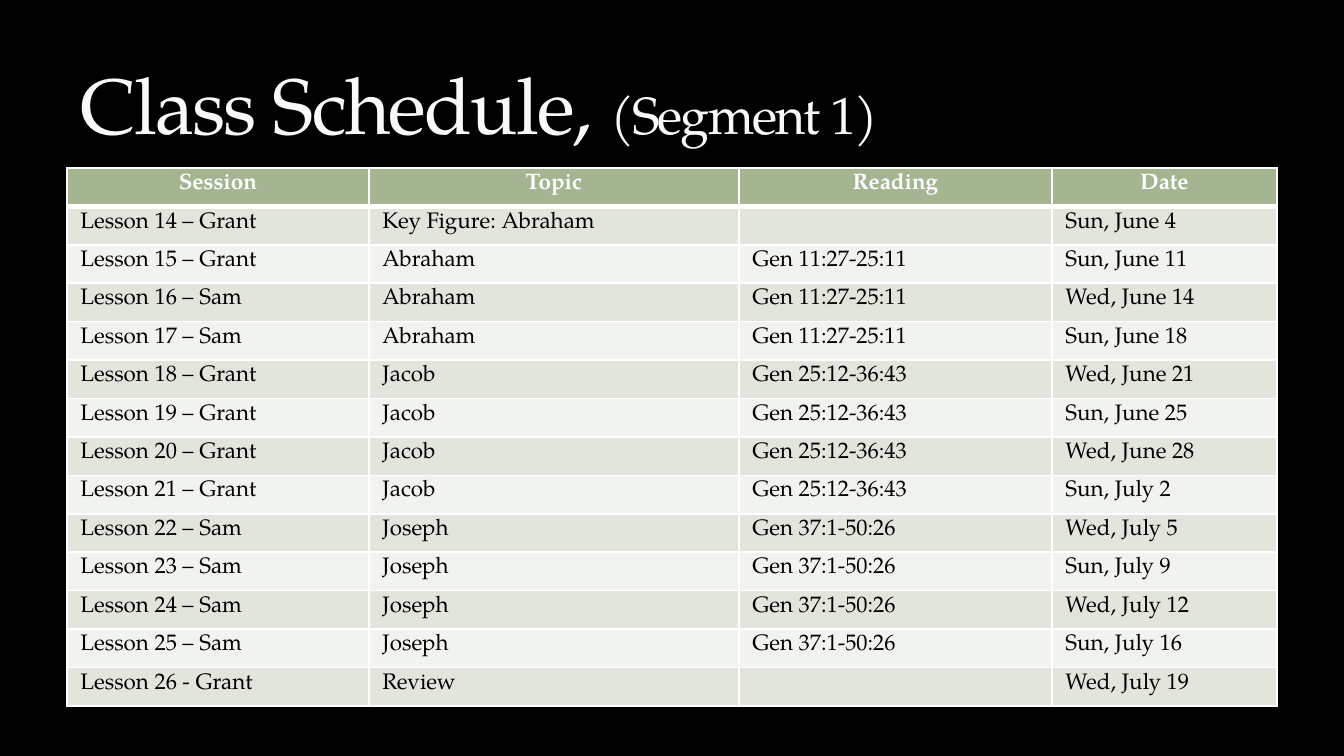
from dataclasses import dataclass

from lxml.etree import SubElement
from pptx import Presentation
from pptx.dml.color import RGBColor
from pptx.enum.text import MSO_ANCHOR, MSO_AUTO_SIZE, PP_ALIGN
from pptx.oxml.ns import qn
from pptx.util import Inches, Pt

HEADINGS = ("Session", "Topic", "Reading", "Date")
LESSONS = [
    ("Lesson 14 – Grant", "Key Figure: Abraham", "", "Sun, June 4"),
    ("Lesson 15 – Grant", "Abraham", "Gen 11:27-25:11", "Sun, June 11"),
    ("Lesson 16 – Sam", "Abraham", "Gen 11:27-25:11", "Wed, June 14"),
    ("Lesson 17 – Sam", "Abraham", "Gen 11:27-25:11", "Sun, June 18"),
    ("Lesson 18 – Grant", "Jacob", "Gen 25:12-36:43", "Wed, June 21"),
    ("Lesson 19 – Grant", "Jacob", "Gen 25:12-36:43", "Sun, June 25"),
    ("Lesson 20 – Grant", "Jacob", "Gen 25:12-36:43", "Wed, June 28"),
    ("Lesson 21 – Grant", "Jacob", "Gen 25:12-36:43", "Sun, July 2"),
    ("Lesson 22 – Sam", "Joseph", "Gen 37:1-50:26", "Wed, July 5"),
    ("Lesson 23 – Sam", "Joseph", "Gen 37:1-50:26", "Sun, July 9"),
    ("Lesson 24 – Sam", "Joseph", "Gen 37:1-50:26", "Wed, July 12"),
    ("Lesson 25 – Sam", "Joseph", "Gen 37:1-50:26", "Sun, July 16"),
    ("Lesson 26 - Grant", "Review", "", "Wed, July 19"),
]
COLUMN_WIDTHS = (302, 370, 313, 225)
TABLE_LEFT, TABLE_TOP, TABLE_HEIGHT = 67, 168, 538
TITLE_BOX = (67, 16, 1210, 134)
SLIDE_SIZE = (1344, 756)
EMU_PER_PX = Inches(10) / SLIDE_SIZE[0]


@dataclass(frozen=True)
class Theme:
    font: str = "TeX Gyre Pagella"
    background: str = "000000"
    title: str = "F9F9F9"
    title_outline: str = "3C4422"
    header_fill: str = "A5B592"
    header_text: str = "FFFFFF"
    bands: tuple = ("E1E5DC", "F0F3EE")
    body_text: str = "000000"
    border: str = "FFFFFF"
    title_size: int = 42
    segment_size: int = 28
    cell_size: int = 12


THEME = Theme()
TITLE_RUNS = [
    ("Class Schedule, ", THEME.title_size),
    ("(Segment 1)", THEME.segment_size),
]


def px(length):
    return round(length * EMU_PER_PX)


def add_run(paragraph, text, size, color, bold=False):
    run = paragraph.add_run()
    run.text = text
    run.font.name = THEME.font
    run.font.size = Pt(size)
    run.font.bold = bold
    run.font.color.rgb = RGBColor.from_string(color)
    return run


def add_line(parent, tag, width, color):
    line = SubElement(parent, qn(tag), w=str(Pt(width)))
    fill = SubElement(line, qn("a:solidFill"))
    return line, SubElement(fill, qn("a:srgbClr"), val=color)


def fill_title(title):
    title.left, title.top, title.width, title.height = map(px, TITLE_BOX)
    frame = title.text_frame
    frame.word_wrap = True
    frame.auto_size = MSO_AUTO_SIZE.NONE
    frame.vertical_anchor = MSO_ANCHOR.BOTTOM
    frame.margin_bottom = 0
    paragraph = frame.paragraphs[0]
    paragraph.alignment = PP_ALIGN.LEFT
    for text, size in TITLE_RUNS:
        properties = add_run(paragraph, text, size, THEME.title).font._element
        properties.set("spc", "-100")
        outline, outline_color = add_line(properties, "a:ln", 0.25, THEME.title_outline)
        SubElement(outline_color, qn("a:alpha"), val="25000")
        properties.insert(0, outline)


def fill_cell(cell, text, row):
    is_header = row == 0
    cell.margin_left = cell.margin_right = Inches(0.1)
    cell.margin_top = cell.margin_bottom = Inches(0.04)
    properties = cell._tc.get_or_add_tcPr()
    widths = {"L": 1, "R": 1, "T": 3 if row == 1 else 1, "B": 3 if is_header else 1}
    for side, width in widths.items():
        add_line(properties, f"a:ln{side}", width, THEME.border)
    cell.fill.solid()
    background = THEME.header_fill if is_header else THEME.bands[(row - 1) % 2]
    cell.fill.fore_color.rgb = RGBColor.from_string(background)
    paragraph = cell.text_frame.paragraphs[0]
    paragraph.alignment = PP_ALIGN.CENTER if is_header else PP_ALIGN.LEFT
    if text:
        color = THEME.header_text if is_header else THEME.body_text
        add_run(paragraph, text, THEME.cell_size, color, is_header)
    else:
        SubElement(paragraph._p, qn("a:endParaRPr"), sz=str(THEME.cell_size * 100))


def add_schedule(slide):
    rows = [HEADINGS, *LESSONS]
    frame = slide.shapes.add_table(
        len(rows), len(HEADINGS), px(TABLE_LEFT), px(TABLE_TOP),
        px(sum(COLUMN_WIDTHS)), px(TABLE_HEIGHT),
    )
    schedule = frame.table
    for column, width in zip(schedule.columns, COLUMN_WIDTHS):
        column.width = px(width)
    for row, texts in enumerate(rows):
        schedule.rows[row].height = px(TABLE_HEIGHT / len(rows))
        for column, text in enumerate(texts):
            fill_cell(schedule.cell(row, column), text, row)


def main():
    presentation = Presentation()
    presentation.slide_width, presentation.slide_height = map(px, SLIDE_SIZE)
    slide = presentation.slides.add_slide(presentation.slide_layouts[5])
    slide.background.fill.solid()
    slide.background.fill.fore_color.rgb = RGBColor.from_string(THEME.background)
    add_schedule(slide)
    title = slide.shapes.title
    fill_title(title)
    title.element.getparent().append(title.element)
    presentation.save("out.pptx")


if __name__ == "__main__":
    main()
